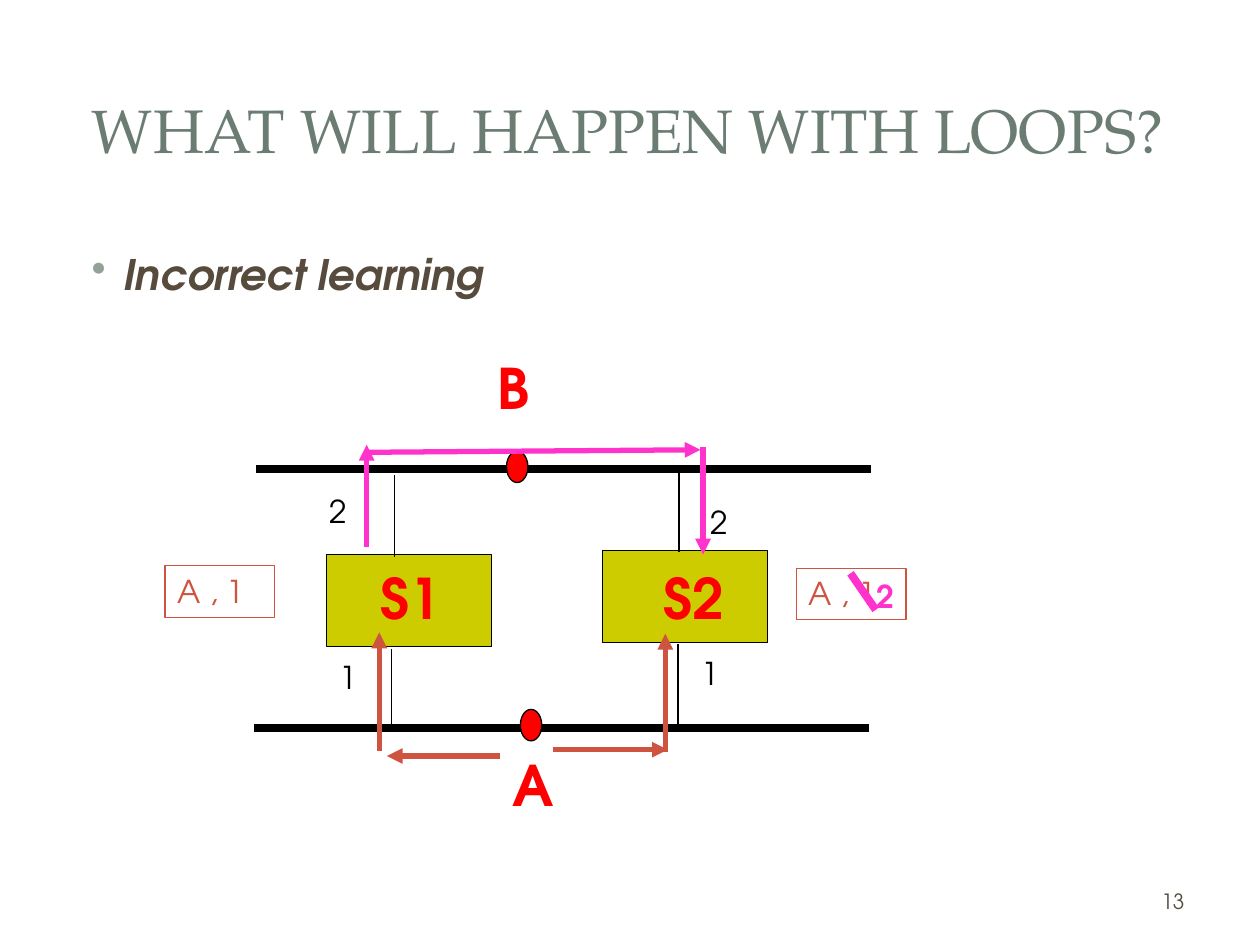
from dataclasses import dataclass

from lxml import etree
from pptx import Presentation
from pptx.dml.color import RGBColor
from pptx.enum.shapes import MSO_CONNECTOR, MSO_SHAPE
from pptx.enum.text import MSO_ANCHOR, MSO_AUTO_SIZE, PP_ALIGN
from pptx.oxml.ns import qn
from pptx.util import Pt

STRAIGHT = MSO_CONNECTOR.STRAIGHT
RECTANGLE, OVAL = MSO_SHAPE.RECTANGLE, MSO_SHAPE.OVAL
TOP, MIDDLE = MSO_ANCHOR.TOP, MSO_ANCHOR.MIDDLE
LEFT, CENTER, RIGHT = PP_ALIGN.LEFT, PP_ALIGN.CENTER, PP_ALIGN.RIGHT
NO_AUTOFIT = MSO_AUTO_SIZE.NONE
TITLE_ONLY = 5
EMU_PER_PX = 9144  # 100 px to the inch


@dataclass(frozen=True)
class Theme:
    heading_font: str = "TeX Gyre Pagella"
    body_font: str = "TeX Gyre Adventor"
    heading: str = "6B7D72"
    body: str = "564B3C"
    bullet: str = "93A299"
    black: str = "000000"
    red: str = "FF0000"
    switch: str = "CCCC00"
    first_hop: str = "CF543F"
    loop: str = "FF33CC"
    title_size: int = 35
    name_size: int = 32
    body_size: int = 24
    label_size: int = 18
    number_size: int = 12
    thin: float = 0.75
    arrow: float = 3
    thick: float = 4.5


THEME = Theme()


def px(*lengths):
    return [length * EMU_PER_PX for length in lengths]


def set_attributes(target, values):
    for name, value in values.items():
        setattr(target, name, value)


def write_text(shape, text, size, color, font=THEME.body_font, align=LEFT,
               anchor=TOP, **font_values):
    """Put one formatted line of text in a shape."""
    frame = shape.text_frame
    set_attributes(frame, {"word_wrap": True, "auto_size": NO_AUTOFIT,
                           "vertical_anchor": anchor})
    if align == LEFT:
        frame.margin_right = 0
    paragraph = frame.paragraphs[0]
    paragraph.alignment = align
    run = paragraph.add_run()
    run.text = text
    set_attributes(run.font, {"name": font, "size": Pt(size), **font_values})
    run.font.color.rgb = RGBColor.from_string(color)
    return paragraph


def add_text(slide, box, text, size, color, **values):
    shape = slide.shapes.add_textbox(*px(*box))
    return write_text(shape, text, size, color, **values)


def add_outlined(slide, kind, box, line, fill=None):
    """Add a preset shape with a thin outline and an optional fill."""
    shape = slide.shapes.add_shape(kind, *px(*box))
    shape.shadow.inherit = False
    if fill:
        shape.fill.solid()
        shape.fill.fore_color.rgb = RGBColor.from_string(fill)
    else:
        shape.fill.background()
    shape.line.color.rgb = RGBColor.from_string(line)
    shape.line.width = Pt(THEME.thin)
    return shape


def add_line(slide, ends, color, width, arrow=False):
    connector = slide.shapes.add_connector(STRAIGHT, *px(*ends))
    connector.line.color.rgb = RGBColor.from_string(color)
    connector.line.width = Pt(width)
    properties = connector._element.spPr
    if arrow:
        outline = properties.find(qn("a:ln"))
        etree.SubElement(outline, qn("a:tailEnd"), type="triangle")
    etree.SubElement(properties, qn("a:effectLst"))


def add_bullet(paragraph, color, left, hanging):
    properties = paragraph._p.get_or_add_pPr()
    left, hanging = px(left, hanging)
    properties.set("marL", str(left))
    properties.set("indent", str(-hanging))
    bullet_color = etree.SubElement(properties, qn("a:buClr"))
    etree.SubElement(bullet_color, qn("a:srgbClr"), val=color)
    etree.SubElement(properties, qn("a:buChar"), char="•")


def add_title(slide, text):
    title = slide.shapes.title
    names = ("left", "top", "width", "height")
    set_attributes(title, dict(zip(names, px(47, 45, 903, 114))))
    write_text(title, text, THEME.title_size, THEME.heading,
               font=THEME.heading_font, align=CENTER, anchor=MIDDLE)


def add_network(slide):
    # Two LAN segments
    for left, y in ((203, 372), (202, 578)):
        add_line(slide, (left, y, left + 488, y), THEME.black, THEME.thick)
    # Switches and their links to the segments
    for left, top in ((259, 440), (478, 437)):
        add_outlined(slide, RECTANGLE, (left, top, 131, 73),
                     THEME.black, THEME.switch)
    for x, top, bottom in ((311, 515, 579), (538, 511, 576),
                           (539, 373, 438), (313, 377, 442)):
        add_line(slide, (x, top, x, bottom), THEME.black, THEME.thin)
    # Hosts
    for name, name_at, dot_at in (("A", (397, 591), (413, 563)),
                                  ("B", (385, 276), (402, 358))):
        add_text(slide, (*name_at, 79, 63), name, THEME.name_size,
                 THEME.red, bold=True)
        add_outlined(slide, OVAL, (*dot_at, 17, 25), THEME.black, THEME.red)
    # Port numbers
    for port, left, top in (("1", 260, 517), ("1", 547, 514),
                            ("2", 554, 394), ("2", 252, 386)):
        add_text(slide, (left, top, 50, 40), port,
                 THEME.label_size, THEME.black)


def add_frame_paths(slide):
    # Frame from A reaches both switches
    for ends in ((397, 600, 307, 600), (439, 595, 530, 595),
                 (301, 596, 301, 502), (528, 597, 528, 503)):
        add_line(slide, ends, THEME.first_hop, THEME.arrow, arrow=True)
    # Learned table entries
    for left, top in ((131, 449), (632, 451)):
        entry = add_outlined(slide, RECTANGLE, (left, top, 87, 41),
                             THEME.first_hop)
        write_text(entry, "A , 1", THEME.label_size, THEME.first_hop)
    # Frame forwarded by S1 comes back to S2
    for ends in ((291, 434, 291, 353), (291, 359, 556, 357),
                 (558, 355, 558, 440)):
        add_line(slide, ends, THEME.loop, THEME.arrow, arrow=True)
    # Entry of S2 is overwritten
    add_text(slide, (686, 453, 50, 40), "2", THEME.label_size,
             THEME.loop, bold=True)
    add_line(slide, (675, 455, 695, 484), THEME.loop, THEME.thick)


def main():
    presentation = Presentation()
    presentation.slide_width, presentation.slide_height = px(1000, 750)
    slide = presentation.slides.add_slide(
        presentation.slide_layouts[TITLE_ONLY])

    add_title(slide, "WHAT WILL HAPPEN WITH LOOPS?")
    point = add_text(slide, (50, 192, 900, 478), "Incorrect learning",
                     THEME.body_size, THEME.body, bold=True, italic=True)
    add_bullet(point, THEME.bullet, 38, 25)
    add_text(slide, (717, 695, 233, 40), "13", THEME.number_size, THEME.body,
             align=RIGHT, anchor=MIDDLE)

    add_network(slide)
    add_frame_paths(slide)
    # Switch names
    for name, left in (("S1", 292), ("S2", 517)):
        add_text(slide, (left, 442, 69, 64), name, THEME.name_size,
                 THEME.red, bold=True)

    presentation.save("out.pptx")


if __name__ == "__main__":
    main()
